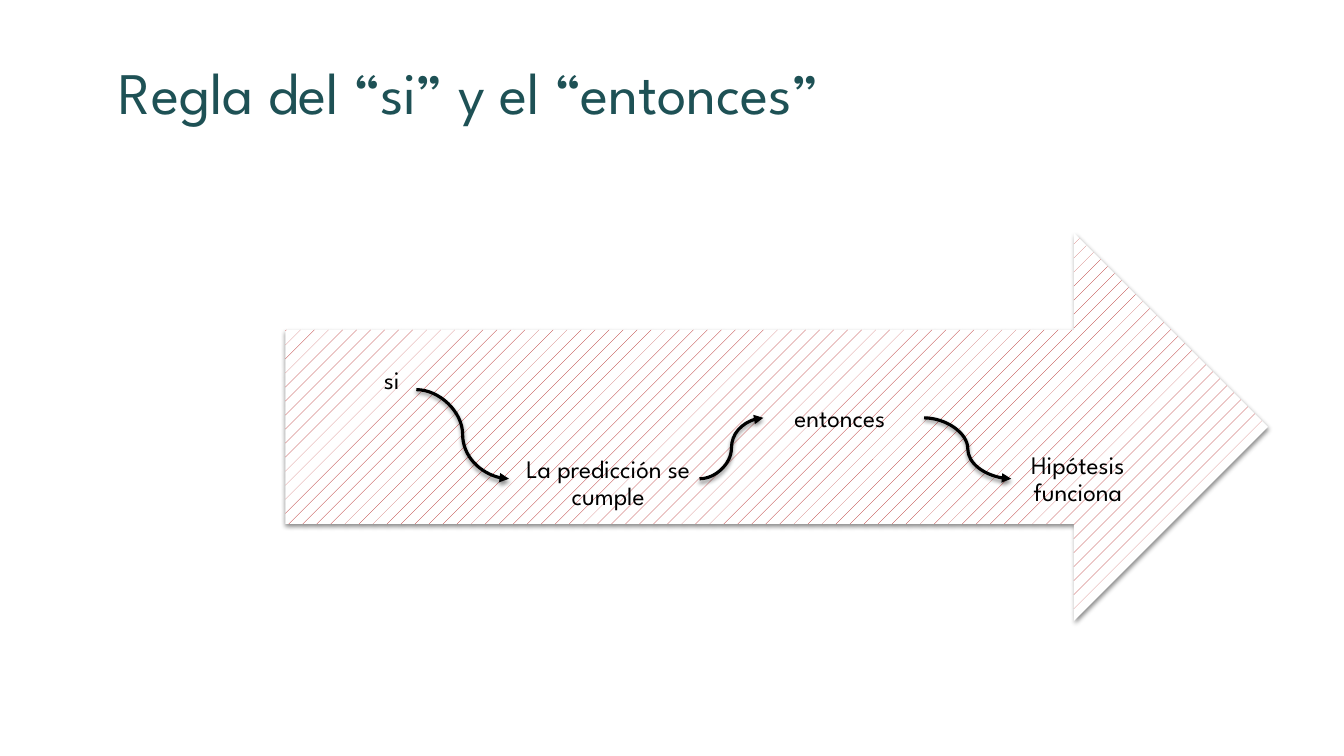
from dataclasses import dataclass

from lxml.etree import SubElement
from pptx import Presentation
from pptx.dml.color import RGBColor as Rgb
from pptx.enum.dml import MSO_PATTERN as Pattern
from pptx.enum.shapes import MSO_CONNECTOR as Link, MSO_SHAPE as Form
from pptx.enum.text import MSO_ANCHOR as Anchor, MSO_AUTO_SIZE as Fit, PP_ALIGN as Align
from pptx.oxml.ns import qn
from pptx.util import Pt


@dataclass(frozen=True)
class Theme:
    font: str = "League Spartan"
    title: Rgb = Rgb(0x1E, 0x51, 0x55)
    ink: Rgb = Rgb(0, 0, 0)
    accent: Rgb = Rgb(0xB0, 0x15, 0x13)
    paper: Rgb = Rgb(0xFF, 0xFF, 0xFF)
    big: float = 42
    small: float = 18
    stroke: float = 2.25


THEME = Theme()
TITLE_BOX = (77.75, 36, 702, 100.8)
FLOW_BOX = (203.75, 166.3, 702, 277.2)
STEP_SIZE = (125.3, 70.5)
STEPS = [
    ("Hipótesis funciona", 503.5, 141),
    ("entonces", 333.5, 98),
    ("La predicción se cumple", 168, 144),
    ("si", 13.5, 70.5),
]
CURVES = [
    ((93.6, 112), (159.8, 175.7)),
    ((295.9, 175.7), (341.5, 132.2)),
    ((456.4, 132.2), (518.6, 175.7)),
]


def apply(item, values):
    for name, value in values.items():
        setattr(item, name, value)


def write(shape, text, frame, para, font):
    body = shape.text_frame
    body.text = text
    apply(body, {"word_wrap": True, "auto_size": Fit.NONE, **frame})
    first = body.paragraphs[0]
    apply(first, para)
    color = font.pop("color")
    apply(first.font, {"name": THEME.font, **font})
    first.font.color.rgb = color


def cast(shape):
    props = shape._element.spPr
    effects = SubElement(props, qn("a:effectLst"))
    shadow = SubElement(effects, qn("a:outerShdw"), blurRad=str(Pt(3)),
                        dist=str(Pt(2)), dir="5400000", rotWithShape="0")
    tint = SubElement(shadow, qn("a:srgbClr"), val=str(THEME.ink))
    SubElement(tint, qn("a:alpha"), val="45000")


def add_title(slide, box):
    title = slide.shapes.title
    apply(title, dict(zip(("left", "top", "width", "height"), map(Pt, box))))
    write(title, "Regla del “si” y el “entonces”",
          {"vertical_anchor": Anchor.TOP},
          {"alignment": Align.LEFT},
          {"size": Pt(THEME.big), "color": THEME.title})


def add_step(group, text, left, top):
    step = group.shapes.add_textbox(Pt(left), Pt(top), *map(Pt, STEP_SIZE))
    write(step, text,
          {"vertical_anchor": Anchor.MIDDLE, "margin_left": 0, "margin_right": 0,
           "margin_top": Pt(14.4), "margin_bottom": Pt(14.4)},
          {"alignment": Align.CENTER, "line_spacing": 0.9, "space_after": Pt(6.3)},
          {"size": Pt(THEME.small), "color": THEME.ink})


def add_curve(slide, start, end):
    curve = slide.shapes.add_connector(Link.CURVE, *map(Pt, (*start, *end)))
    curve.line.width = Pt(THEME.stroke)
    curve.line.color.rgb = THEME.ink
    SubElement(curve.line._get_or_add_ln(), qn("a:tailEnd"), type="triangle")
    cast(curve)


def add_flow(slide, box):
    left, top, width, height = box
    group = slide.shapes.add_group_shape()
    arrow = group.shapes.add_shape(Form.RIGHT_ARROW, *map(Pt, box))
    arrow.fill.patterned()
    arrow.fill.pattern = Pattern.PERCENT_5
    arrow.fill.fore_color.rgb = THEME.accent
    arrow.fill.back_color.rgb = THEME.paper
    arrow.line.fill.background()
    cast(arrow)
    for text, x, y in STEPS:
        add_step(group, text, left + x, top + y)
    for ends in CURVES:
        add_curve(slide, *((left + x, top + y) for x, y in ends))


def main():
    deck = Presentation()
    apply(deck, {"slide_width": Pt(960), "slide_height": Pt(540)})
    slide = deck.slides.add_slide(deck.slide_layouts[5])
    slide.background.fill.solid()
    slide.background.fill.fore_color.rgb = THEME.paper
    add_flow(slide, FLOW_BOX)
    add_title(slide, TITLE_BOX)
    deck.save("out.pptx")


if __name__ == "__main__":
    main()
